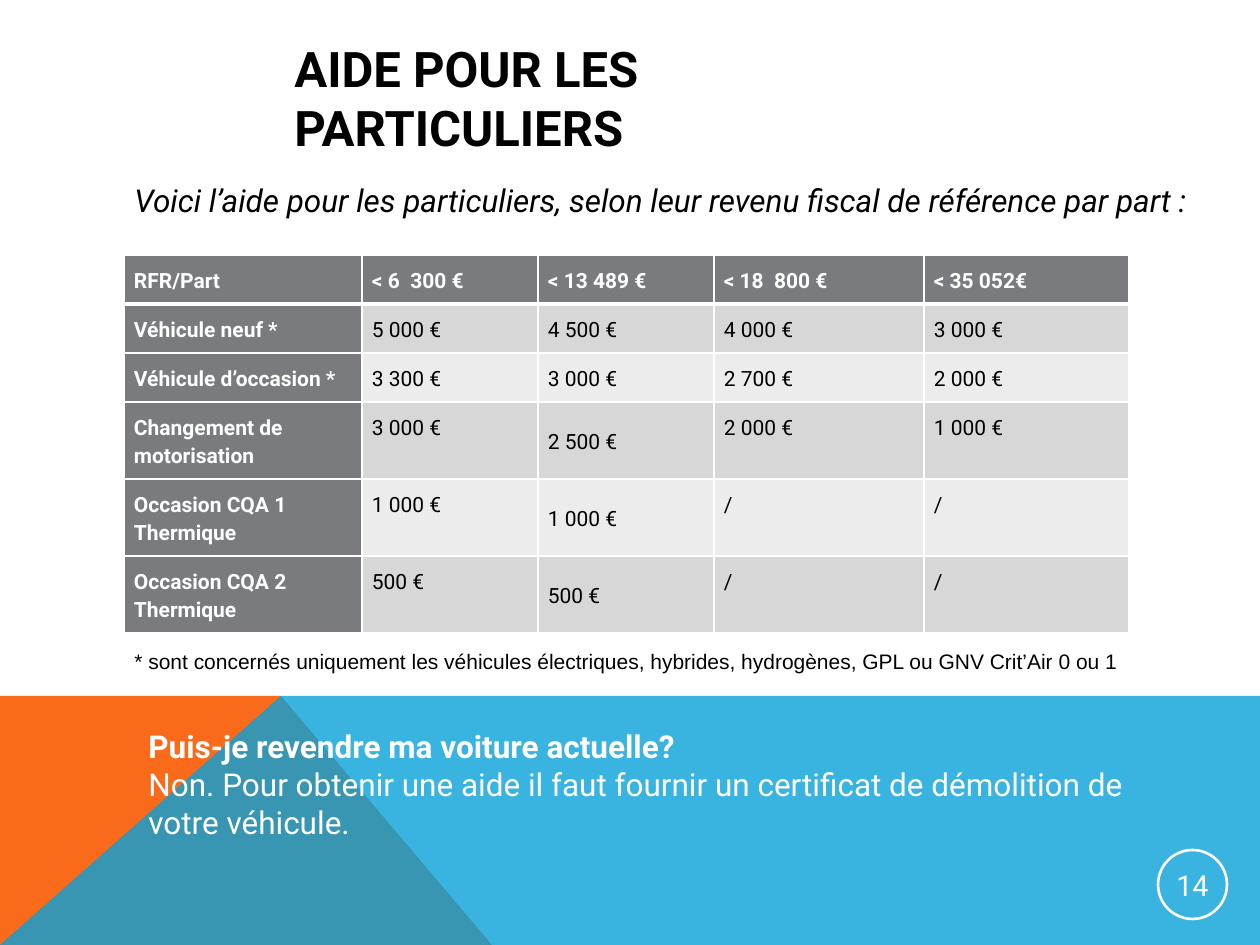
from dataclasses import dataclass
import pptx
import pptx.dml.color
import pptx.enum.shapes
import pptx.enum.text
import pptx.oxml
import pptx.oxml.ns
import pptx.util
from lxml import etree

SCALE = 914400 / 126
WHITE, BLACK, GREY = "FFFFFF", "000000", "797B7E"
BANDS = ("D7D7D8", "ECECEC")
MID = pptx.enum.text.MSO_ANCHOR.MIDDLE
TOP = pptx.enum.text.MSO_ANCHOR.TOP
A = pptx.oxml.ns.qn


@dataclass
class Box:
    left: int
    top: int
    width: int
    height: int

    def emu(self) -> list:
        return [px(n) for n in (self.left, self.top, self.width, self.height)]


@dataclass
class Patch:
    points: list
    fill: str
    alpha: int = 100


@dataclass
class Row:
    height: int
    texts: tuple


PATCHES = [
    Patch([(0, 945), (0, 696), (281, 696), (492, 945)], "F96A1B"),
    Patch([(0, 945), (281, 696), (1260, 696), (1260, 945)], "08A1D9", 80),
]
WIDTHS = (238, 176, 176, 210, 205)
ROWS = [
    Row(49, ("RFR/Part", "< 6  300 €", "< 13 489 €", "< 18  800 €", "< 35 052€")),
    Row(49, ("Véhicule neuf *", "5 000 €", "4 500 €", "4 000 €", "3 000 €")),
    Row(49, ("Véhicule d’occasion *", "3 300 €", "3 000 €", "2 700 €", "2 000 €")),
    Row(77, ("Changement de motorisation", "3 000 €", "2 500 €", "2 000 €", "1 000 €")),
    Row(77, ("Occasion CQA 1 Thermique", "1 000 €", "1 000 €", "/", "/")),
    Row(77, ("Occasion CQA 2 Thermique", "500 €", "500 €", "/", "/")),
]


def px(n: int) -> int:
    return round(n * SCALE)


def paint(fmt, color: str) -> None:
    if hasattr(fmt, "solid"):
        fmt.solid()
        fmt = fmt.fore_color
    fmt.rgb = pptx.dml.color.RGBColor.from_string(color)


def write(frame, text: str, size=12, color=BLACK, font="Roboto", bold=False,
          italic=False, align=None, space=None, after=None, more=False) -> None:
    para = frame.add_paragraph() if more else frame.paragraphs[0]
    para.alignment = align
    para.line_spacing = space
    if after is not None:
        para.space_after = pptx.util.Pt(after)
    run = para.add_run()
    run.text = text
    run.font.size = pptx.util.Pt(size)
    run.font.name = font
    run.font.bold, run.font.italic = bold, italic
    paint(run.font.color, color)


def add_box(slide, box: Box, anchor=TOP):
    frame = slide.shapes.add_textbox(*box.emu()).text_frame
    frame.word_wrap = True
    frame.vertical_anchor = anchor
    return frame


def draw_patch(slide, patch: Patch) -> None:
    pen = slide.shapes.build_freeform(*patch.points[0], scale=SCALE)
    pen.add_line_segments(patch.points[1:], close=True)
    shape = pen.convert_to_shape()
    shape.shadow.inherit = False
    shape.line.fill.background()
    paint(shape.fill, patch.fill)
    if patch.alpha < 100:
        tint = shape.element.find(".//" + A("a:solidFill") + "/" + A("a:srgbClr"))
        etree.SubElement(tint, A("a:alpha"), val=str(patch.alpha * 1000))


def edge_cell(cell, top: int, bottom: int) -> None:
    props = cell._tc.get_or_add_tcPr()
    for i, (side, width) in enumerate(zip("LRTB", (1, 1, top, bottom))):
        line = etree.Element(A("a:ln" + side), w=str(pptx.util.Pt(width)))
        fill = etree.SubElement(line, A("a:solidFill"))
        etree.SubElement(fill, A("a:srgbClr"), val=WHITE)
        props.insert(i, line)


def draw_table(slide, box: Box, rows: list) -> None:
    table = slide.shapes.add_table(len(rows), len(WIDTHS), *box.emu()).table
    table.horz_banding = False
    for col, width in zip(table.columns, WIDTHS):
        col.width = px(width)
    for r, row in enumerate(rows):
        table.rows[r].height = px(row.height)
        for c, text in enumerate(row.texts):
            cell = table.cell(r, c)
            head = r == 0 or c == 0
            cell.margin_left = cell.margin_right = px(10)
            cell.margin_top = cell.margin_bottom = px(10)
            cell.vertical_anchor = MID if head or c == 2 else TOP
            paint(cell.fill, GREY if head else BANDS[(r - 1) % 2])
            edge_cell(cell, 3 if r == 1 else 1, 3 if r == 0 else 1)
            write(cell.text_frame, text, color=WHITE if head else BLACK,
                  bold=head, space=1.15, after=10)


def draw_badge(slide, box: Box, text: str) -> None:
    oval = pptx.enum.shapes.MSO_SHAPE.OVAL
    badge = slide.shapes.add_shape(oval, *box.emu())
    badge.shadow.inherit = False
    badge.fill.background()
    paint(badge.line.fill, WHITE)
    badge.line.width = pptx.util.Pt(1.5)
    frame = badge.text_frame
    frame.margin_left = frame.margin_right = px(1)
    frame.margin_top = frame.margin_bottom = px(1)
    frame.vertical_anchor = MID
    write(frame, text, size=16.5, color=WHITE,
          align=pptx.enum.text.PP_ALIGN.CENTER)


def main() -> None:
    deck = pptx.Presentation()
    deck.slide_width, deck.slide_height = px(1260), px(945)
    slide = deck.slides.add_slide(deck.slide_layouts[6])
    for patch in PATCHES:
        draw_patch(slide, patch)
    high = sum(row.height for row in ROWS)
    draw_table(slide, Box(124, 255, sum(WIDTHS), high), ROWS)

    note = add_box(slide, Box(122, 621, 1012, 127))
    note.margin_top = px(28)
    write(note, "* sont concernés uniquement les véhicules électriques, hybrides, "
          "hydrogènes, GPL ou GNV Crit’Air 0 ou 1", font="Arial")
    write(add_box(slide, Box(122, 175, 1094, 50)),
          "Voici l’aide pour les particuliers, selon leur revenu fiscal de "
          "référence par part :", size=18, italic=True)
    reply = add_box(slide, Box(136, 721, 1012, 127))
    write(reply, "Puis-je revendre ma voiture actuelle?", size=18, color=WHITE,
          bold=True)
    write(reply, "Non. Pour obtenir une aide il faut fournir un certificat de "
          "démolition de votre véhicule.", size=18, color=WHITE, more=True)
    draw_badge(slide, Box(1158, 850, 69, 69), "14")
    write(add_box(slide, Box(282, 37, 692, 121), MID),
          "AIDE POUR LES PARTICULIERS", size=28, bold=True)
    deck.save("out.pptx")


if __name__ == "__main__":
    main()
